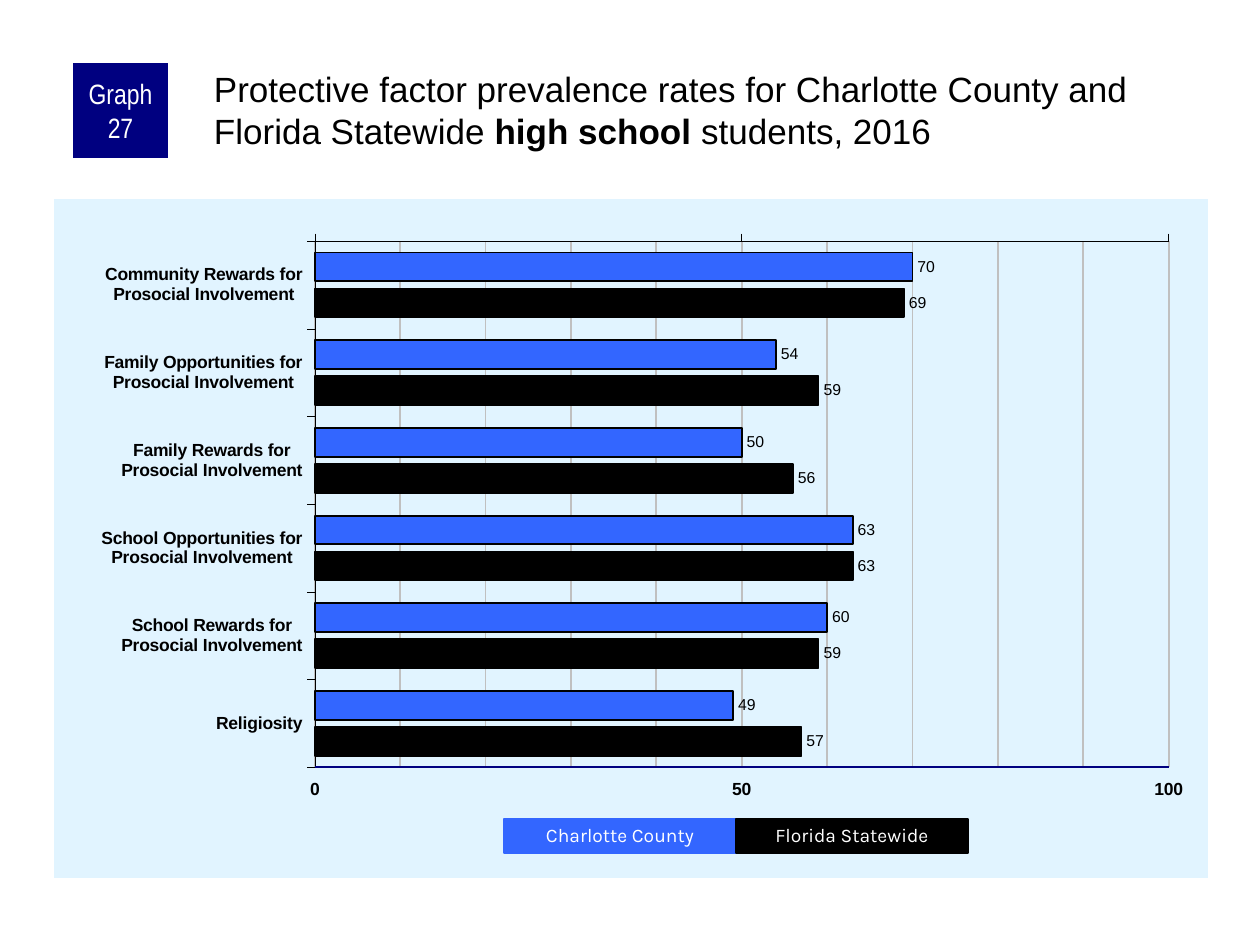
from copy import deepcopy

from lxml import etree
from pptx import Presentation
from pptx import util as u
from pptx.chart.data import CategoryChartData
from pptx.dml.color import RGBColor
from pptx.enum import chart as ch, shapes, text
from pptx.oxml import parse_xml
from pptx.oxml.ns import nsdecls, qn

PX_PER_INCH = 126
BLACK, WHITE, NAVY, BLUE = "000000", "FFFFFF", "000080", "3366FF"
PANEL, GRID = "E1F4FF", "C0C0C0"

GRAPH_LABEL = "Graph 27"
TITLE = [
    ("Protective factor prevalence rates for Charlotte County and Florida Statewide ", False),
    ("high school ", True),
    ("students, 2016", False),
]
FACTORS = [
    ("Community Rewards for\nProsocial Involvement", 70, 69),
    ("Family Opportunities for\nProsocial Involvement", 54, 59),
    ("Family Rewards for\nProsocial Involvement", 50, 56),
    ("School Opportunities for\nProsocial Involvement", 63, 63),
    ("School Rewards for\nProsocial Involvement", 60, 59),
    ("Religiosity", 49, 57),
]
REGIONS = [("Charlotte County", BLUE), ("Florida Statewide", BLACK)]

CHART_BOX = (54, 199, 1154, 679)
PLOT = {"x": 0.226, "y": 0.062, "w": 0.74, "h": 0.775}
LEGEND_LEFT, LEGEND_TOP, LEGEND_WIDTH, LEGEND_HEIGHT = 504, 819, 232, 34


def px(value):
    return u.Emu(round(value * u.Inches(1) / PX_PER_INCH))


def rgb(value):
    return RGBColor.from_string(value)


def set_font(font, name, size, color, bold=False):
    font.name, font.size, font.bold = name, u.Pt(size), bold
    font.color.rgb = rgb(color)


def set_line(line, color, width):
    line.color.rgb = rgb(color)
    line.width = u.Pt(width)


def set_insets(frame, left, top, right, bottom):
    frame.margin_left, frame.margin_top = px(left), px(top)
    frame.margin_right, frame.margin_bottom = px(right), px(bottom)


def add_label(slide, box, content, fill, font, size):
    """Add a filled rectangle with centred white text."""
    shape = slide.shapes.add_shape(shapes.MSO_SHAPE.RECTANGLE, *map(px, box))
    shape.shadow.inherit = False
    shape.fill.solid()
    shape.fill.fore_color.rgb = rgb(fill)
    frame = shape.text_frame
    frame.word_wrap = True
    frame.vertical_anchor = text.MSO_ANCHOR.MIDDLE
    set_insets(frame, 6, 0, 6, 0)
    paragraph = frame.paragraphs[0]
    paragraph.alignment = text.PP_ALIGN.CENTER
    run = paragraph.add_run()
    run.text = content
    set_font(run.font, font, size, WHITE)
    return shape


def add_title(slide):
    frame = slide.shapes.add_textbox(*map(px, (210, 63, 998, 105))).text_frame
    frame.word_wrap = True
    set_insets(frame, 4, 4, 0, 0)
    for content, bold in TITLE:
        run = frame.paragraphs[0].add_run()
        run.text = content
        set_font(run.font, "Arial", 20, BLACK, bold)


def lay_out_chart(chart):
    """Fill the chart area and fix the inner plot area."""
    chart_space = chart.element
    chart_space.find(qn("c:chart")).addnext(parse_xml(
        f'<c:spPr {nsdecls("c", "a")}><a:solidFill><a:srgbClr val="{PANEL}"/></a:solidFill>'
        '<a:ln><a:noFill/></a:ln></c:spPr>'))
    plot_area = chart_space.find(".//" + qn("c:plotArea"))
    for old_layout in plot_area.findall(qn("c:layout")):
        plot_area.remove(old_layout)
    modes = '<c:xMode val="edge"/><c:yMode val="edge"/>'
    sizes = "".join(f'<c:{key} val="{value}"/>' for key, value in PLOT.items())
    plot_area.insert(0, parse_xml(
        f'<c:layout {nsdecls("c")}><c:manualLayout><c:layoutTarget val="inner"/>'
        f'{modes}{sizes}</c:manualLayout></c:layout>'))


def add_gridlines(chart):
    """Draw major gridlines and give the minor ones the same line."""
    scale = chart.value_axis
    scale.has_major_gridlines = scale.has_minor_gridlines = True
    set_line(scale.major_gridlines.format.line, GRID, 1)
    axis = chart.element.find(".//" + qn("c:valAx"))
    style = axis.find(qn("c:majorGridlines")).find(qn("c:spPr"))
    axis.find(qn("c:minorGridlines")).append(deepcopy(style))


def add_prevalence_chart(slide):
    data = CategoryChartData()
    names, *columns = zip(*FACTORS)
    data.categories = names
    for (region, _), values in zip(REGIONS, columns):
        data.add_series(region, values)
    chart = slide.shapes.add_chart(
        ch.XL_CHART_TYPE.BAR_CLUSTERED, *map(px, CHART_BOX), data).chart
    chart.has_legend = chart.has_title = False
    set_font(chart.font, "Arial", 11.8, BLACK)
    lay_out_chart(chart)

    for axis in (chart.category_axis, chart.value_axis):
        axis.major_tick_mark = ch.XL_TICK_MARK.OUTSIDE
        axis.minor_tick_mark = ch.XL_TICK_MARK.NONE
        set_font(axis.tick_labels.font, "Arial", 10, BLACK, True)
        set_line(axis.format.line, BLACK, 0.25)
    chart.category_axis.reverse_order = True

    scale = chart.value_axis
    scale.minimum_scale, scale.maximum_scale = 0, 100
    scale.major_unit, scale.minor_unit = 50, 10
    scale.tick_label_position = ch.XL_TICK_LABEL_POSITION.HIGH
    add_gridlines(chart)

    plot = chart.plots[0]
    plot.gap_width, plot.overlap, plot.vary_by_categories = 80, -25, False
    for series, (_, color) in zip(plot.series, REGIONS):
        series.format.fill.solid()
        series.format.fill.fore_color.rgb = rgb(color)
        set_line(series.format.line, BLACK, 1)
        labels = series.data_labels
        labels.show_value = True
        labels.position = ch.XL_LABEL_POSITION.OUTSIDE_END
        set_font(labels.font, "Arial", 9, BLACK)


def add_baseline(slide):
    left, top, width, height = CHART_BOX
    start = left + PLOT["x"] * width
    end = start + PLOT["w"] * width
    y = top + (PLOT["y"] + PLOT["h"]) * height
    line = slide.shapes.add_connector(
        shapes.MSO_CONNECTOR.STRAIGHT, px(start), px(y), px(end), px(y))
    set_line(line.line, NAVY, 1)
    etree.SubElement(line.element.spPr, qn("a:effectLst"))


def add_legend(slide):
    for index, (region, color) in enumerate(REGIONS):
        box = (LEGEND_LEFT + index * LEGEND_WIDTH, LEGEND_TOP, LEGEND_WIDTH, LEGEND_HEIGHT)
        shape = add_label(slide, box, region, color, "Karla", 11)
        set_line(shape.line, color, 0.75)
        shape.text_frame.paragraphs[0].line_spacing = 0.9


def main():
    presentation = Presentation()
    presentation.slide_width, presentation.slide_height = u.Inches(10), u.Inches(7.5)
    slide = presentation.slides.add_slide(presentation.slide_layouts[6])
    add_prevalence_chart(slide)
    add_baseline(slide)
    badge = add_label(slide, (73, 63, 95, 95), GRAPH_LABEL, NAVY, "Arial Narrow", 16)
    badge.line.fill.background()
    add_title(slide)
    add_legend(slide)
    presentation.save("out.pptx")


if __name__ == "__main__":
    main()
